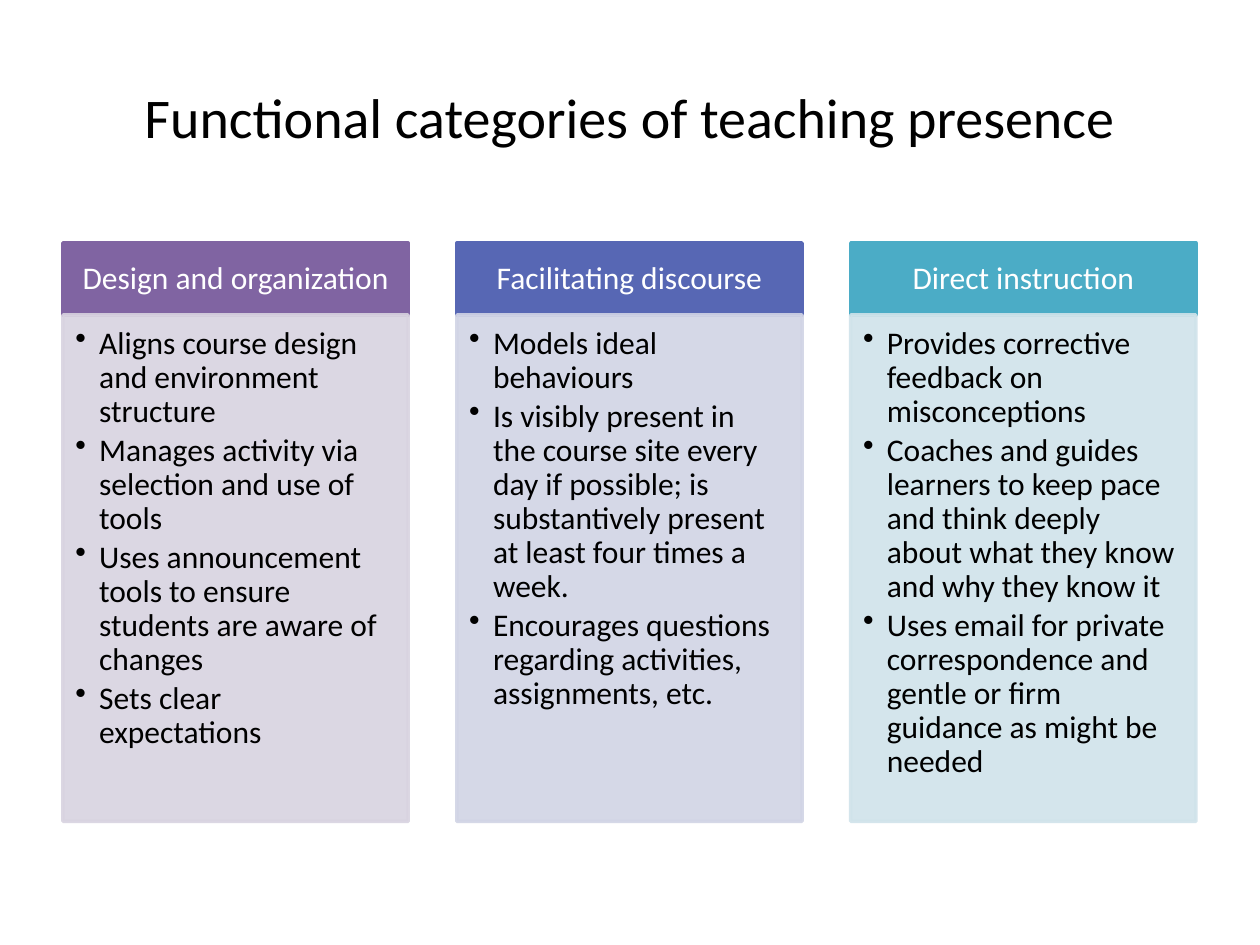
from lxml.etree import SubElement
from pptx import Presentation
from pptx.dml.color import RGBColor
from pptx.enum.shapes import MSO_SHAPE as Shape
from pptx.enum.text import MSO_ANCHOR as Anchor, PP_ALIGN as Align
from pptx.oxml.ns import qn
from pptx.util import Cm, Pt

COLORS = {
    "text": "000000", "header_text": "FFFFFF",
    "purple": "8064A2", "pale_purple": "D8D3E0",
    "blue": "5767B4", "pale_blue": "D1D4E5",
    "teal": "4BACC6", "pale_teal": "D0E3EA",
}
CATEGORIES = [
    ("Design and organization", "purple", [
        "Aligns course design and environment structure",
        "Manages activity via selection and use of tools",
        "Uses announcement tools to ensure students are aware of changes",
        "Sets clear expectations",
    ]),
    ("Facilitating discourse", "blue", [
        "Models ideal behaviours",
        "Is visibly present in the course site every day if possible; "
        "is substantively present at least four times a week.",
        "Encourages questions regarding activities, assignments, etc.",
    ]),
    ("Direct instruction", "teal", [
        "Provides corrective feedback on misconceptions",
        "Coaches and guides learners to keep pace and think deeply "
        "about what they know and why they know it",
        "Uses email for private correspondence and gentle or firm "
        "guidance as might be needed",
    ]),
]
HEADER_FRAME = {
    "word_wrap": True, "vertical_anchor": Anchor.MIDDLE,
    "margin_left": Cm(0.36), "margin_right": Cm(0.36),
    "margin_top": Cm(0.2), "margin_bottom": Cm(0.2),
}
BODY_FRAME = {
    "word_wrap": True, "vertical_anchor": Anchor.TOP,
    "margin_left": Cm(0.25), "margin_right": Cm(0.36),
    "margin_top": Cm(0.25), "margin_bottom": Cm(0.38),
}
TITLE_PARA = {"alignment": Align.CENTER}
HEADER_PARA = {"alignment": Align.CENTER, "line_spacing": 0.9}
BULLET_PARA = {"alignment": Align.LEFT, "level": 1, "line_spacing": 0.9,
               "space_after": Pt(2.7)}
BULLET_INDENT = Cm(0.48)


def rgb(name):
    return RGBColor.from_string(COLORS[name])


def apply(target, values):
    for name, value in values.items():
        setattr(target, name, value)


def write(para, text, size, color, values):
    apply(para, values)
    span = para.add_run()
    span.text = text
    apply(span.font, {"name": "Calibri", "size": Pt(size)})
    span.font.color.rgb = rgb(color)


def add_bullet(para):
    props = para._p.get_or_add_pPr()
    props.set("marL", str(BULLET_INDENT))
    props.set("indent", str(-BULLET_INDENT))
    SubElement(props, qn("a:buChar"), char="•")


def add_panel(page, box, color, frame_values, opacity=100):
    panel = page.shapes.add_shape(Shape.RECTANGLE, *map(Cm, box))
    panel.shadow.inherit = False
    panel.fill.solid()
    panel.fill.fore_color.rgb = rgb(color)
    panel.line.color.rgb = rgb(color)
    panel.line.width = Pt(2)
    if opacity < 100:
        for paint in panel._element.spPr.iter(qn("a:srgbClr")):
            SubElement(paint, qn("a:alpha"), val=str(opacity * 1000))
    apply(panel.text_frame, frame_values)
    return panel.text_frame


def add_title(page, box, text):
    frame = page.shapes.add_textbox(*map(Cm, box)).text_frame
    apply(frame, {"word_wrap": True, "vertical_anchor": Anchor.MIDDLE})
    write(frame.paragraphs[0], text, 32, "text", TITLE_PARA)


def add_category(page, box, heading, color, points):
    """Place a header bar with a pale bullet panel under it."""
    left, top, width, height = box
    bar = 1.45
    header = add_panel(page, (left, top, width, bar), color, HEADER_FRAME)
    write(header.paragraphs[0], heading, 18, "header_text", HEADER_PARA)

    body = add_panel(page, (left, top + bar, width, height - bar),
                     f"pale_{color}", BODY_FRAME, opacity=90)
    for index, point in enumerate(points):
        para = body.add_paragraph() if index else body.paragraphs[0]
        write(para, point, 18, "text", BULLET_PARA)
        add_bullet(para)


def add_columns(page, box, categories, gap):
    left, top, width, height = box
    column = (width - gap * (len(categories) - 1)) / len(categories)
    for index, category in enumerate(categories):
        start = left + index * (column + gap)
        add_category(page, (start, top, column, height), *category)


def main():
    deck = Presentation()
    deck.slide_width, deck.slide_height = Cm(25.4), Cm(19.05)
    page = deck.slides.add_slide(deck.slide_layouts[6])
    add_title(page, (1.27, 0.76, 22.86, 3.18),
              "Functional categories of teaching presence")
    add_columns(page, (1.27, 4.9, 22.84, 11.66), CATEGORIES, gap=0.98)
    deck.save("out.pptx")


if __name__ == "__main__":
    main()
